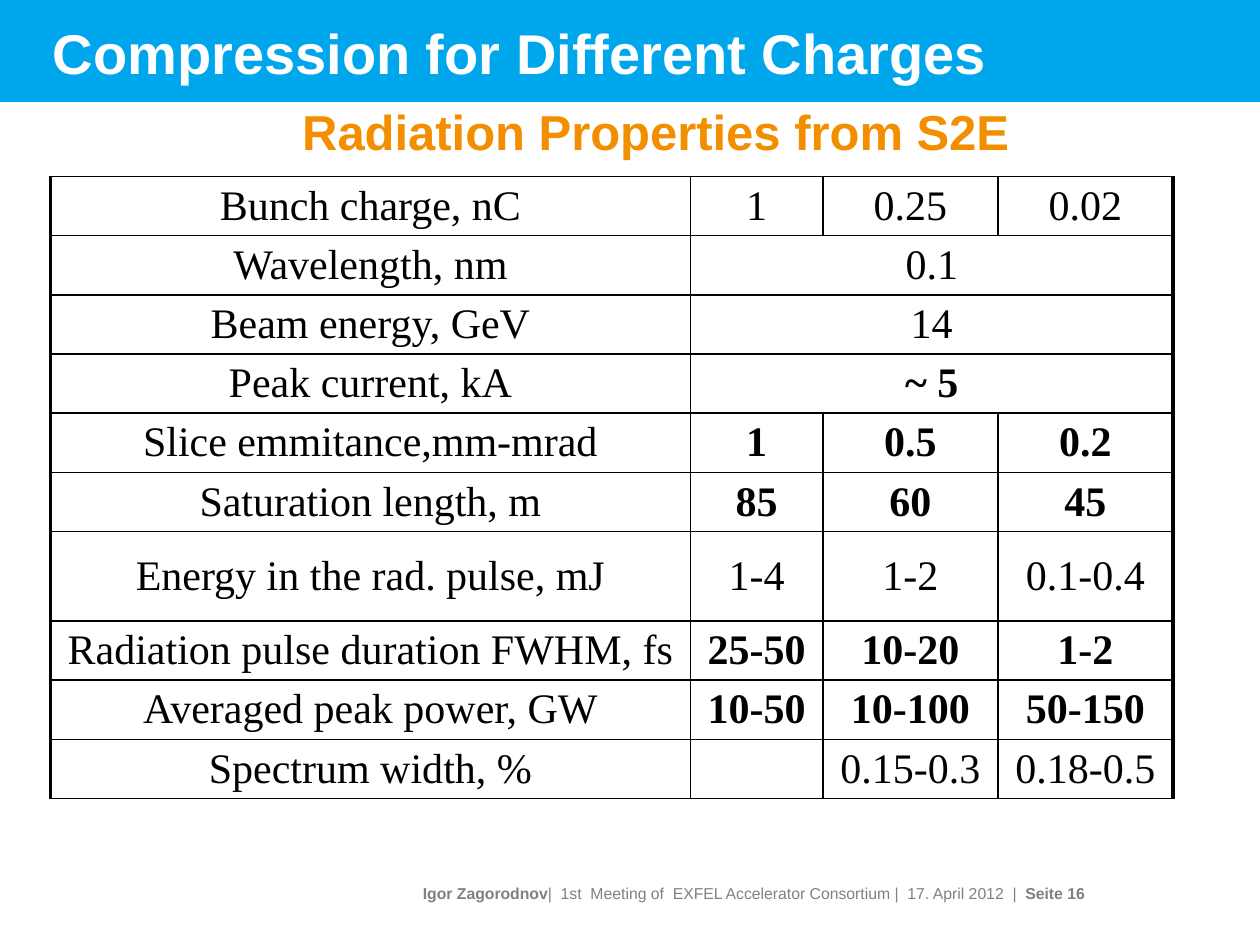
from lxml.etree import SubElement
from pptx import Presentation
from pptx.dml.color import RGBColor
from pptx.enum.shapes import MSO_SHAPE as Shape
from pptx.enum.text import MSO_ANCHOR as Anchor, PP_ALIGN as Align
from pptx.oxml.ns import qn
from pptx.util import Inches, Pt

COLORS = {
    "banner": "00A6EB",
    "title": "FFFFFF",
    "subtitle": "F28E00",
    "footer": "808080",
    "table": "000000",
}

# Label, values (a single value spans all columns), values in bold
ROWS = [
    ("Bunch charge, nC", ["1", "0.25", "0.02"], False),
    ("Wavelength, nm", ["0.1"], False),
    ("Beam energy, GeV", ["14"], False),
    ("Peak current, kA", ["~ 5"], True),
    ("Slice emmitance,mm-mrad", ["1", "0.5", "0.2"], True),
    ("Saturation length, m", ["85", "60", "45"], True),
    ("Energy in the rad. pulse, mJ", ["1-4", "1-2", "0.1-0.4"], False),
    ("Radiation pulse duration FWHM, fs", ["25-50", "10-20", "1-2"], True),
    ("Averaged peak power, GW", ["10-50", "10-100", "50-150"], True),
    ("Spectrum width, %", ["", "0.15-0.3", "0.18-0.5"], False),
]
COLUMN_WIDTHS = [5.08, 1.05, 1.39, 1.39]
ROW_HEIGHT, TALL_ROW_HEIGHT, TALL_ROW = 0.47, 0.71, 6


def add_span(para, text, size=24, font="Arial", color="table", bold=False):
    span = para.add_run()
    span.text = text
    span.font.size = Pt(size)
    span.font.name = font
    span.font.bold = bold
    span.font.color.rgb = RGBColor.from_string(COLORS[color])


class SlideBuilder:
    def __init__(self, slide, thin=1, thick=2.25):
        self.slide = slide
        self.thin = thin
        self.thick = thick

    def banner(self, left, top, width, height):
        bar = self.slide.shapes.add_shape(
            Shape.RECTANGLE, Inches(left), Inches(top), Inches(width), Inches(height))
        bar.shadow.inherit = False
        bar.fill.solid()
        bar.fill.fore_color.rgb = RGBColor.from_string(COLORS["banner"])
        bar.line.fill.background()

    def text(self, left, top, width, height, spans, align=Align.LEFT,
             anchor=Anchor.MIDDLE, wrap=True, right_inset=0.1, **style):
        box = self.slide.shapes.add_textbox(
            Inches(left), Inches(top), Inches(width), Inches(height))
        frame = box.text_frame
        frame.word_wrap = wrap
        frame.vertical_anchor = anchor
        frame.margin_right = Inches(right_inset)
        para = frame.paragraphs[0]
        para.alignment = align
        for text, bold in spans:
            add_span(para, text, bold=bold, **style)

    def borders(self, cell, first, last):
        properties = cell._tc.get_or_add_tcPr()
        widths = {"a:lnL": self.thick if first else self.thin,
                  "a:lnR": self.thick if last else self.thin,
                  "a:lnT": self.thin, "a:lnB": self.thin}
        for tag, width in widths.items():
            line = SubElement(properties, qn(tag), w=str(Pt(width)))
            fill = SubElement(line, qn("a:solidFill"))
            SubElement(fill, qn("a:srgbClr"), val=COLORS["table"])

    def table(self, left, top, rows):
        heights = [TALL_ROW_HEIGHT if index == TALL_ROW else ROW_HEIGHT
                   for index in range(len(rows))]
        last = len(COLUMN_WIDTHS) - 1
        table = self.slide.shapes.add_table(
            len(rows), last + 1, Inches(left), Inches(top),
            Inches(sum(COLUMN_WIDTHS)), Inches(sum(heights))).table
        table.first_row = table.horz_banding = False
        for column, width in zip(table.columns, COLUMN_WIDTHS):
            column.width = Inches(width)

        for index, (label, values, bold) in enumerate(rows):
            table.rows[index].height = Inches(heights[index])
            spanning = len(values) == 1
            for column in range(last + 1):
                cell = table.cell(index, column)
                at_right_edge = column == last or (spanning and column > 0)
                self.borders(cell, column == 0, at_right_edge)
                cell.fill.background()
                cell.vertical_anchor = Anchor.MIDDLE
                cell.margin_top = cell.margin_bottom = Inches(0.03)
            if spanning:
                table.cell(index, 1).merge(table.cell(index, last))
            for column, text in enumerate([label] + values):
                if text:
                    para = table.cell(index, column).text_frame.paragraphs[0]
                    para.alignment = Align.CENTER
                    add_span(para, text, font="Times New Roman",
                             bold=bold and column > 0)


def main():
    deck = Presentation()
    deck.slide_width, deck.slide_height = Inches(10), Inches(7.5)
    page = SlideBuilder(deck.slides.add_slide(deck.slide_layouts[6]))

    # Banner and footer
    page.banner(0, 0, 10, 0.81)
    page.text(0.31, 6.87, 8.3, 0.44, [
        ("Igor Zagorodnov", True),
        ("|  1st  Meeting of  EXFEL Accelerator Consortium |  17. April 2012  |  ", False),
        ("Seite 16", True),
    ], align=Align.RIGHT, right_inset=0, size=9, color="footer")

    # Title
    page.text(0.32, 0.11, 9.32, 0.6, [("Compression for Different Charges", True)],
              size=32, color="title")

    # Radiation properties
    page.table(0.4, 1.4, ROWS)
    page.text(2.3, 0.76, 5.88, 0.57, [("Radiation Properties from S2E", True)],
              anchor=Anchor.TOP, wrap=False, size=28, color="subtitle")

    deck.save("out.pptx")


if __name__ == "__main__":
    main()
